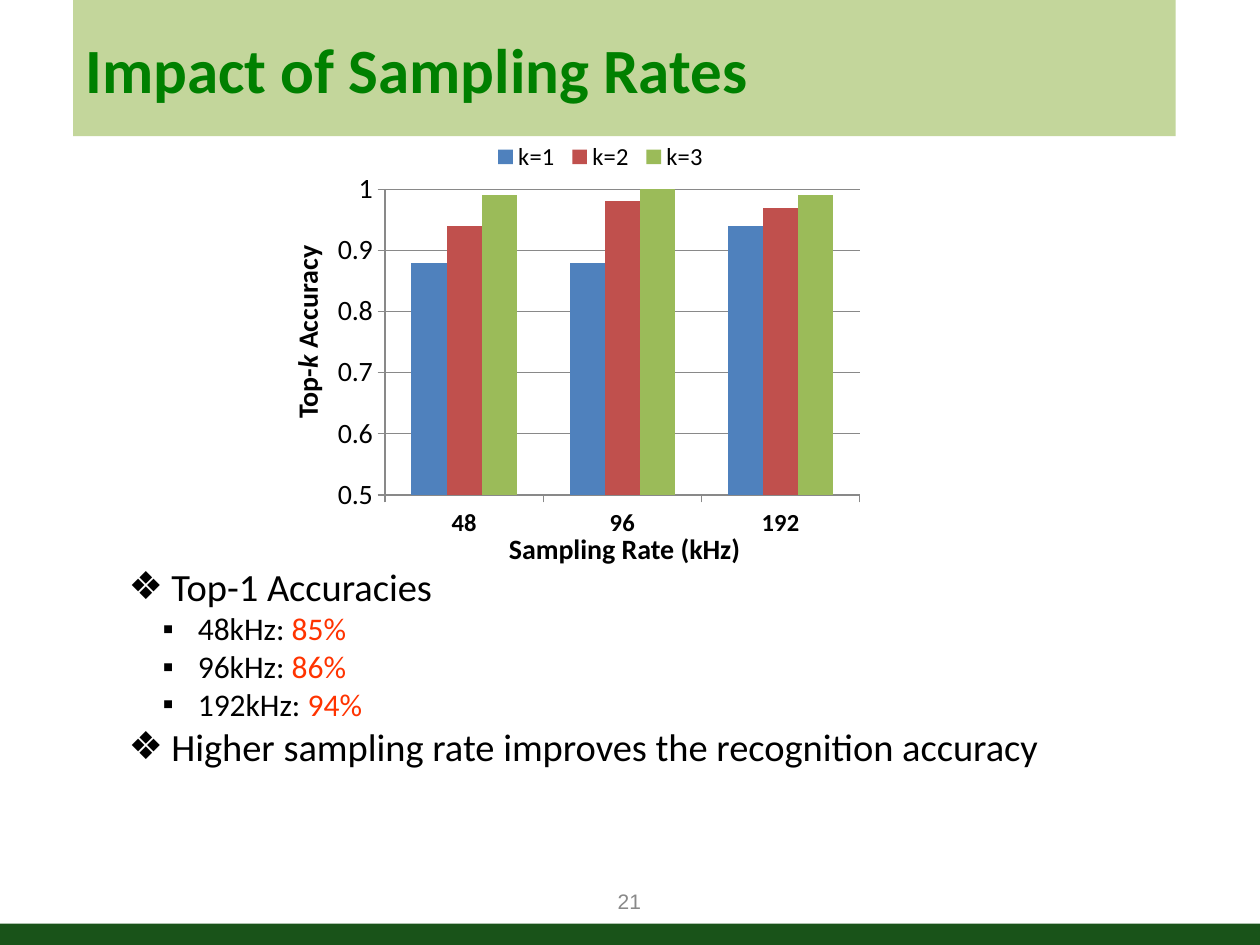
from pptx import Presentation
from pptx.chart.data import CategoryChartData
from pptx.dml.color import RGBColor
from pptx.enum import chart as charts, shapes, text
from pptx.oxml import parse_xml
from pptx.oxml.ns import nsdecls, qn
from pptx.util import Inches, Pt

BLACK = RGBColor(0, 0, 0)
GREEN = RGBColor(0x00, 0x80, 0x00)
LIGHT_GREEN = RGBColor(0xC3, 0xD6, 0x9B)
DARK_GREEN = RGBColor(0x19, 0x53, 0x19)
ORANGE = RGBColor(0xFF, 0x33, 0x00)
GRAY = RGBColor(0x89, 0x89, 0x89)
SERIES = {
    "k=1": ((0.88, 0.88, 0.94), RGBColor(0x4F, 0x81, 0xBD)),
    "k=2": ((0.94, 0.98, 0.97), RGBColor(0xC0, 0x50, 0x4D)),
    "k=3": ((0.99, 1, 0.99), RGBColor(0x9B, 0xBB, 0x59)),
}


def add_span(para, words, size, color=BLACK, **formats):
    span = para.add_run()
    span.text = words
    span.font.color.rgb = color
    for name, value in {"name": "Calibri", "size": Pt(size), **formats}.items():
        setattr(span.font, name, value)


def set_layout(parent, index, target, x, y, w, h):
    """Fix a chart part's place, in fractions of the chart."""
    for old in parent.findall(qn("c:layout")):
        parent.remove(old)
    target_tag = f'<c:layoutTarget val="{target}"/>' if target else ""
    parent.insert(index, parse_xml(
        f'<c:layout {nsdecls("c")}><c:manualLayout>{target_tag}'
        '<c:xMode val="edge"/><c:yMode val="edge"/>'
        f'<c:x val="{x}"/><c:y val="{y}"/><c:w val="{w}"/><c:h val="{h}"/>'
        '</c:manualLayout></c:layout>'))


deck = Presentation()
deck.slide_width, deck.slide_height = Inches(10), Inches(7.5)
page = deck.slides.add_slide(deck.slide_layouts[1])

# Footer bar
bar = page.shapes.add_shape(shapes.MSO_SHAPE.RECTANGLE,
                            Inches(0), Inches(7.33), Inches(10), Inches(0.17))
bar.shadow.inherit = False
bar.fill.solid()
bar.fill.fore_color.rgb = DARK_GREEN
bar.line.fill.background()

# Title
title = page.shapes.title
title.left, title.top, title.width, title.height = map(Inches, (0.58, 0, 8.75, 1.08))
title.fill.solid()
title.fill.fore_color.rgb = LIGHT_GREEN
title.text_frame.auto_size = text.MSO_AUTO_SIZE.NONE
title.text_frame.vertical_anchor = text.MSO_ANCHOR.MIDDLE
title_para = title.text_frame.paragraphs[0]
title_para.alignment = text.PP_ALIGN.LEFT
add_span(title_para, "Impact of Sampling Rates", 36, GREEN, bold=True)

# Findings
body = page.placeholders[1]
body.left, body.top, body.width, body.height = map(Inches, (0.92, 4.42, 8.33, 1.75))
body.text_frame.auto_size = text.MSO_AUTO_SIZE.NONE
# level: bullet, text indent, hanging indent, size
LEVELS = [("❖", 0.34, 0.34, 22), ("▪", 0.55, 0.28, 18)]
findings = [
    (0, "Top-1 Accuracies", ""),
    (1, "48kHz: ", "85%"),
    (1, "96kHz: ", "86%"),
    (1, "192kHz: ", "94%"),
    (0, "Higher sampling rate improves the recognition accuracy", ""),
]
for number, (level, words, rate) in enumerate(findings):
    frame = body.text_frame
    para = frame.add_paragraph() if number else frame.paragraphs[0]
    bullet, indent, hanging, size = LEVELS[level]
    para.level = level
    para.space_before = Pt(0)
    props = para._p.get_or_add_pPr()
    props.set("marL", str(Inches(indent)))
    props.set("indent", str(-Inches(hanging)))
    props.append(parse_xml(f'<a:buFont {nsdecls("a")} typeface="Arial"/>'))
    props.append(parse_xml(f'<a:buChar {nsdecls("a")} char="{bullet}"/>'))
    add_span(para, words, size)
    if rate:
        add_span(para, rate, size, ORANGE)

# Accuracy chart
data = CategoryChartData()
data.categories = ["48", "96", "192"]
for name, (values, _) in SERIES.items():
    data.add_series(name, values)
chart = page.shapes.add_chart(
    charts.XL_CHART_TYPE.COLUMN_CLUSTERED,
    Inches(2.58), Inches(0.92), Inches(4.33), Inches(3.42), data).chart
chart.has_title = False
chart.font.name, chart.font.size = "Calibri", Pt(16)
chart.font.color.rgb = BLACK
plot = chart.plots[0]
plot.vary_by_categories = False
plot.gap_width, plot.overlap = 150, 0
for series, (_, color) in zip(plot.series, SERIES.values()):
    series.invert_if_negative = False
    series.format.fill.solid()
    series.format.fill.fore_color.rgb = color

values_axis, rates_axis = chart.value_axis, chart.category_axis
scale = {"minimum_scale": 0.5, "maximum_scale": 1, "major_unit": 0.1,
         "has_major_gridlines": True}
for name, value in scale.items():
    setattr(values_axis, name, value)
values_axis.tick_labels.number_format = "General"
values_axis.tick_labels.number_format_is_linked = False
values_axis.major_gridlines.format.line.color.rgb = GRAY
for axis in (values_axis, rates_axis):
    axis.major_tick_mark = charts.XL_TICK_MARK.OUTSIDE
    axis.format.line.color.rgb = GRAY
rates_axis.tick_labels.font.size = Pt(14)
rates_axis.tick_labels.font.bold = True

chart.has_legend = True
legend = chart.legend
legend.position = charts.XL_LEGEND_POSITION.TOP
legend.include_in_layout = False
legend.font.size = Pt(14)
set_layout(chart.element.find(".//" + qn("c:plotArea")), 0, "inner", 0.11, 0.17, 0.87, 0.71)
set_layout(chart.element.find(".//" + qn("c:legend")), 1, "", 0.3, 0.06, 0.41, 0.07)

# Axis captions and page number: place, rotation, alignment, spans
bold = {"bold": True}
labels = [
    ((1.56, 2.36, 1.75, 0.37), 270, text.PP_ALIGN.LEFT,
     [("Top-", 16, BLACK, bold), ("k", 16, BLACK, {"bold": True, "italic": True}),
      (" Accuracy", 16, BLACK, bold)]),
    ((3.94, 4.17, 2.08, 0.37), 0, text.PP_ALIGN.LEFT,
     [("Sampling Rate (kHz)", 16, BLACK, bold)]),
    ((3.83, 6.95, 2.33, 0.4), 0, text.PP_ALIGN.CENTER,
     [("21", 12, GRAY, {"name": "Arial"})]),
]
for place, rotation, alignment, spans in labels:
    box = page.shapes.add_textbox(*map(Inches, place))
    box.rotation = rotation
    box.text_frame.word_wrap = True
    box.text_frame.vertical_anchor = text.MSO_ANCHOR.MIDDLE
    para = box.text_frame.paragraphs[0]
    para.alignment = alignment
    for words, size, color, formats in spans:
        add_span(para, words, size, color, **formats)

deck.save("out.pptx")
